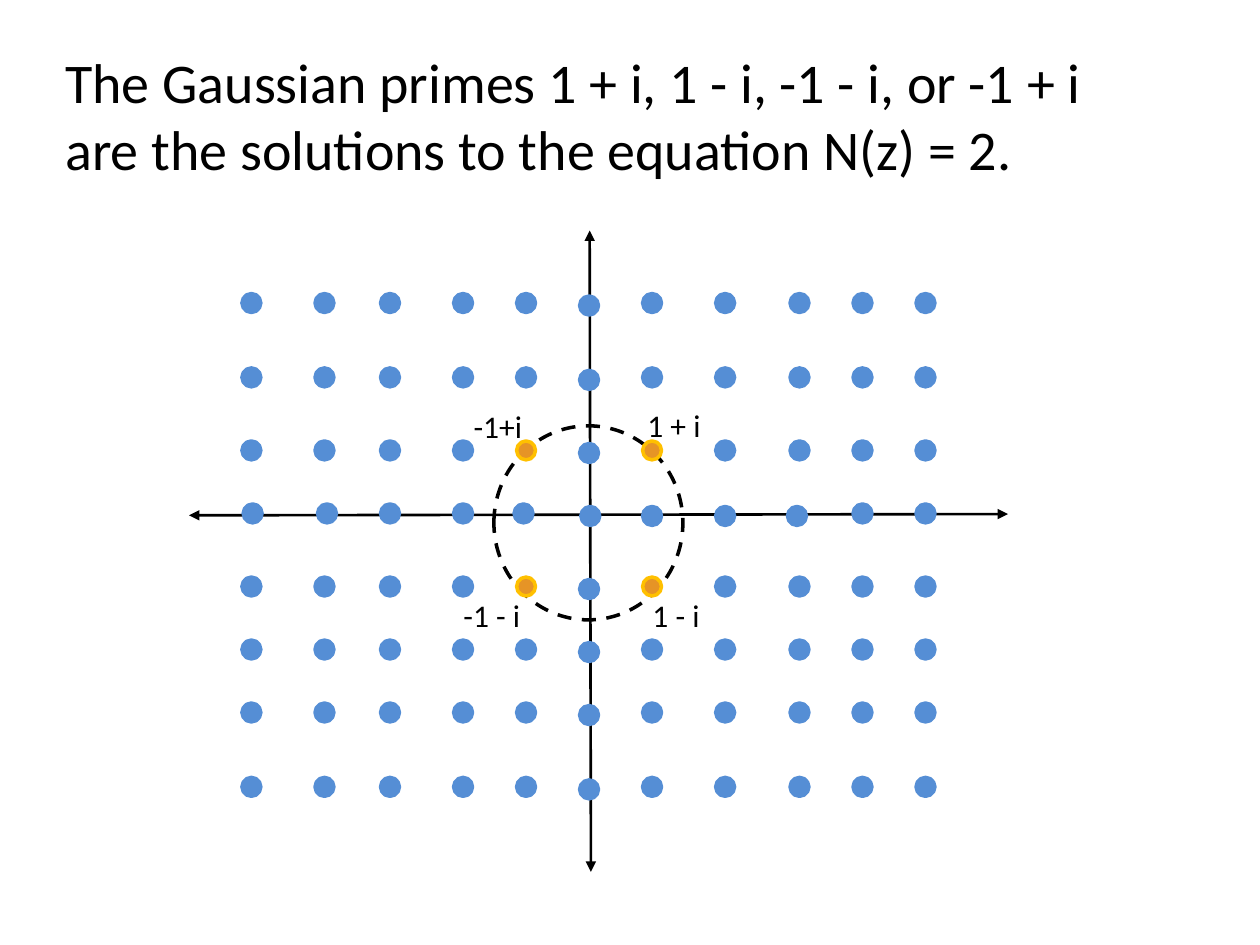
from lxml import etree
from pptx import Presentation
from pptx.dml.color import RGBColor
from pptx.enum.dml import MSO_LINE_DASH_STYLE as DASH
from pptx.enum.shapes import MSO_CONNECTOR as CONN, MSO_SHAPE as SHAPE
from pptx.enum.text import MSO_ANCHOR as ANCHOR, MSO_AUTO_SIZE as FIT, PP_ALIGN as ALIGN
from pptx.oxml.ns import qn
from pptx.util import Inches, Pt

BLACK, BLUE, ORANGE, GOLD = "000000", "558ED5", "E69426", "FFC000"


def rgb(value):
    return RGBColor.from_string(value)


class Canvas:
    font = "Calibri"
    dot_size = 0.15

    def __init__(self, slide):
        self.s = slide

    def text(self, x, y, w, h, lines, size):
        box = self.s.shapes.add_textbox(Inches(x), Inches(y), Inches(w), Inches(h))
        tf = box.text_frame
        tf.word_wrap = False
        tf.auto_size = FIT.SHAPE_TO_FIT_TEXT
        tf.vertical_anchor = ANCHOR.TOP
        for i, line in enumerate(lines):
            p = tf.add_paragraph() if i else tf.paragraphs[0]
            p.alignment = ALIGN.LEFT
            r = p.add_run()
            r.text = line
            r.font.name = self.font
            r.font.size = Pt(size)
            r.font.color.rgb = rgb(BLACK)

    def ellipse(self, x, y, w, h, line, fill=None, dash=None):
        sp = self.s.shapes.add_shape(SHAPE.OVAL, Inches(x), Inches(y), Inches(w), Inches(h))
        sp.shadow.inherit = False
        if fill:
            sp.fill.solid()
            sp.fill.fore_color.rgb = rgb(fill)
        else:
            sp.fill.background()
        sp.line.color.rgb = rgb(line)
        sp.line.width = Pt(2)
        if dash:
            sp.line.dash_style = dash

    def dot(self, x, y, prime=False):
        fill, line = (ORANGE, GOLD) if prime else (BLUE, BLUE)
        self.ellipse(x, y, self.dot_size, self.dot_size, line, fill)

    def axis(self, x1, y1, x2, y2):
        c = self.s.shapes.add_connector(CONN.STRAIGHT, Inches(x1), Inches(y1), Inches(x2), Inches(y2))
        c.line.color.rgb = rgb(BLACK)
        c.line.width = Pt(1.5)
        ln = c.line._get_or_add_ln()
        for end in ("a:headEnd", "a:tailEnd"):
            etree.SubElement(ln, qn(end), type="triangle")
        etree.SubElement(c._element.spPr, qn("a:effectLst"))


def main():
    prs = Presentation()
    prs.slide_width, prs.slide_height = Inches(10), Inches(7.5)
    c = Canvas(prs.slides.add_slide(prs.slide_layouts[6]))

    # Title
    c.text(0.42, 0.33, 8.63, 1.72, [
        "The Gaussian primes 1 + i, 1 - i, -1 - i, or -1 + i",
        "are the solutions to the equation N(z) = 2.",
    ], 32)

    # Circle N(z) = 2 and the two axes
    c.ellipse(3.92, 3.38, 1.5, 1.54, BLACK, dash=DASH.DASH)
    c.axis(1.5, 4.09, 8, 4.08)
    c.axis(4.69, 6.92, 4.68, 1.83)

    # Lattice points off the real axis; the imaginary axis sits slightly lower
    columns = [1.92, 2.5, 3.02, 3.6, 4.1, 4.6, 5.1, 5.68, 6.27, 6.77, 7.27]
    rows = {3: 2.33, 2: 2.92, 1: 3.5, -1: 4.58, -2: 5.08, -3: 5.58, -4: 6.17}
    for im, y in rows.items():
        for re, x in enumerate(columns, start=-5):
            c.dot(x, y if re else y + 0.02, prime=abs(re) == abs(im) == 1)

    # Lattice points on the real axis
    real_points = [1.93, 2.52, 3.02, 3.6, 4.08, 4.61, 5.1, 5.68, 6.25, 6.77, 7.27]
    for re, x in enumerate(real_points, start=-5):
        c.dot(x, 4.02 if 0 <= re <= 3 else 4)

    # Names of the primes
    for x, y, w, name in [
        (5.04, 3.17, 0.63, "1 + i"),
        (3.58, 4.68, 0.66, "-1 - i"),
        (5.08, 4.68, 0.58, "1 - i"),
        (3.66, 3.18, 0.59, "-1+i"),
    ]:
        c.text(x, y, w, 0.4, [name], 18)

    prs.save("out.pptx")


if __name__ == "__main__":
    main()
